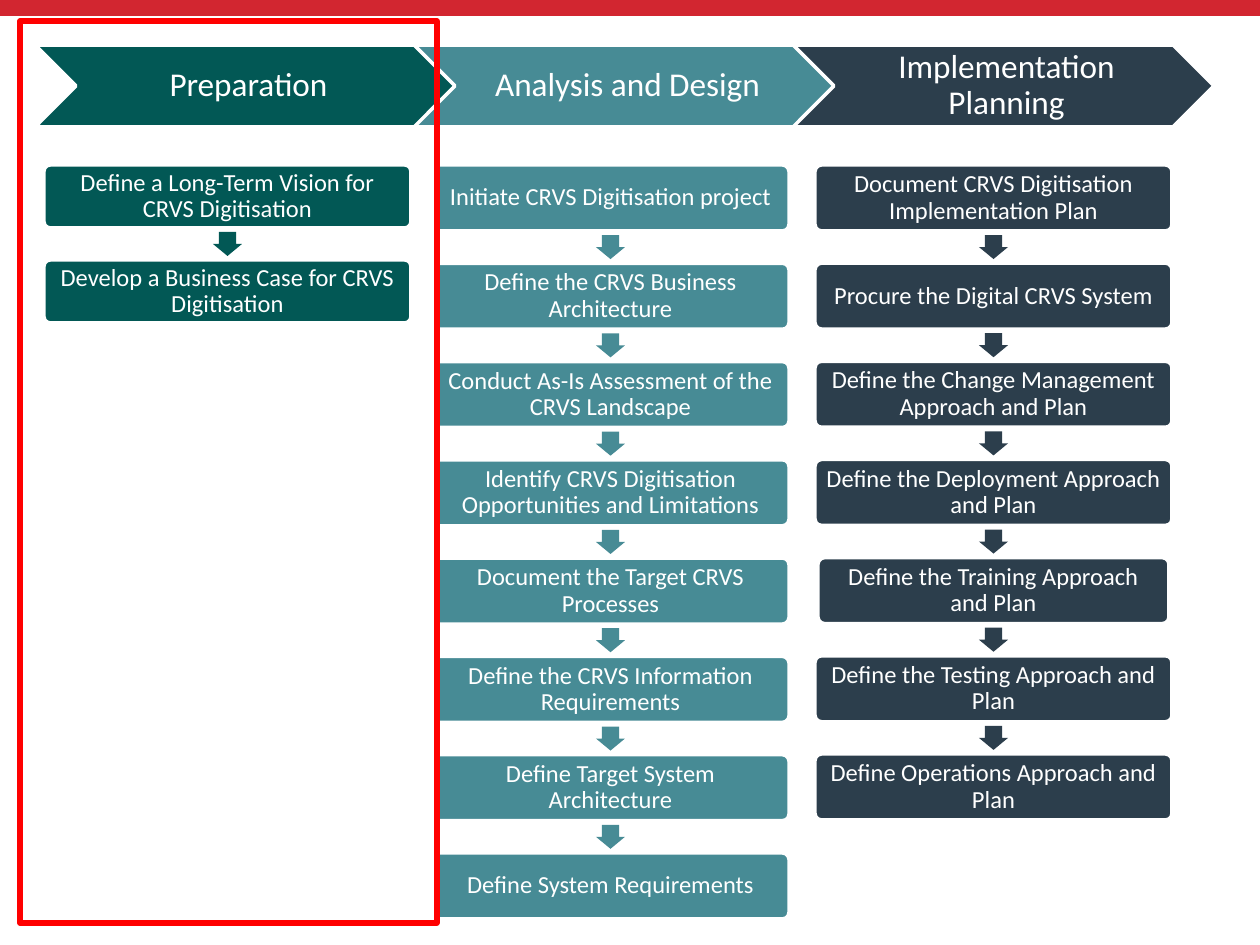
"""Build the CRVS digitisation slide: three phases, their steps and a highlighted phase."""
from pptx import Presentation
from pptx.dml.color import RGBColor
from pptx.enum.shapes import MSO_SHAPE
from pptx.enum.text import MSO_ANCHOR, PP_ALIGN
from pptx.util import Emu, Pt

SCALE = 914400 / 126
COLORS = {
    "preparation": "025855",
    "design": "478B95",
    "planning": "2C3E4C",
    "white": "FFFFFF",
    "highlight": "FF0000",
    "banner": "D22630",
}


def px(length):
    return Emu(round(length * SCALE))


def add_block(preset, left, top, width, height, text="", fill=None, line=None,
              line_width=2, size=14, insets=(8, 8, 8, 8), adjustments=()):
    shape = slide.shapes.add_shape(preset, px(left), px(top), px(width), px(height))
    shape.shadow.inherit = False
    for index, value in enumerate(adjustments):
        shape.adjustments[index] = value
    if fill:
        shape.fill.solid()
        shape.fill.fore_color.rgb = RGBColor.from_string(COLORS[fill])
    else:
        shape.fill.background()
    if line:
        shape.line.color.rgb = RGBColor.from_string(COLORS[line])
        shape.line.width = Pt(line_width)
    else:
        shape.line.fill.background()
    if text:
        frame = shape.text_frame
        frame.word_wrap = True
        frame.vertical_anchor = MSO_ANCHOR.MIDDLE
        frame.margin_left, frame.margin_top, frame.margin_right, frame.margin_bottom = map(px, insets)
        paragraph = frame.paragraphs[0]
        paragraph.alignment = PP_ALIGN.CENTER
        paragraph.line_spacing = 0.9
        run = paragraph.add_run()
        run.text = text
        run.font.name = "Calibri"
        run.font.size = Pt(size)
        run.font.color.rgb = RGBColor.from_string(COLORS["white"])
    return shape


presentation = Presentation()
presentation.slide_width, presentation.slide_height = px(1260), px(945)
slide = presentation.slides.add_slide(presentation.slide_layouts[6])

phases = [("Preparation", "preparation"), ("Analysis and Design", "design"),
          ("Implementation Planning", "planning")]
for index, (name, color) in enumerate(phases):
    add_block(MSO_SHAPE.CHEVRON, 35 + 379 * index, 45, 421, 82, name, fill=color,
              line="white", size=19, insets=(10, 4, 4, 4), adjustments=[0.5])

columns = [
    ("preparation", 44, 367, 63, 260, [
        "Define a Long-Term Vision for CRVS Digitisation",
        "Develop a Business Case for CRVS Digitisation",
    ]),
    ("design", 432, 357, 66, 853, [
        "Initiate CRVS Digitisation project",
        "Define the CRVS Business Architecture",
        "Conduct As-Is Assessment of the CRVS Landscape",
        "Identify CRVS Digitisation Opportunities and Limitations",
        "Document the Target CRVS Processes",
        "Define the CRVS Information Requirements",
        "Define Target System Architecture",
        "Define System Requirements",
    ]),
    ("planning", 815, 357, 66, 754, [
        "Document CRVS Digitisation Implementation Plan",
        "Procure the Digital CRVS System",
        "Define the Change Management Approach and Plan",
        "Define the Deployment Approach and Plan",
        "Define the Training Approach and Plan",
        "Define the Testing Approach and Plan",
        "Define Operations Approach and Plan",
    ]),
]
first_top = 165
arrow_width, arrow_height = 24, 29
narrow_step = "Define the Training Approach and Plan"

for color, left, width, height, last_top, steps in columns:
    pitch = (last_top - first_top) / (len(steps) - 1)
    for index, step in enumerate(steps):
        top = first_top + pitch * index
        inset = 3 if step == narrow_step else 0
        add_block(MSO_SHAPE.ROUNDED_RECTANGLE, left + inset, top, width - 2 * inset, height,
                  step, fill=color, line="white", adjustments=[0.1])
        if index < len(steps) - 1:
            gap_middle = top + (height + pitch) / 2
            arrow = add_block(MSO_SHAPE.RIGHT_ARROW, left + (width - arrow_width) / 2,
                              gap_middle - arrow_height / 2, arrow_width, arrow_height,
                              fill=color, adjustments=[0.6, 0.5])
            arrow.rotation = 90

add_block(MSO_SHAPE.RECTANGLE, 20, 21, 417, 902, line="highlight", line_width=3)
add_block(MSO_SHAPE.RECTANGLE, 0, 0, 1260, 16, fill="banner")

presentation.save("out.pptx")
